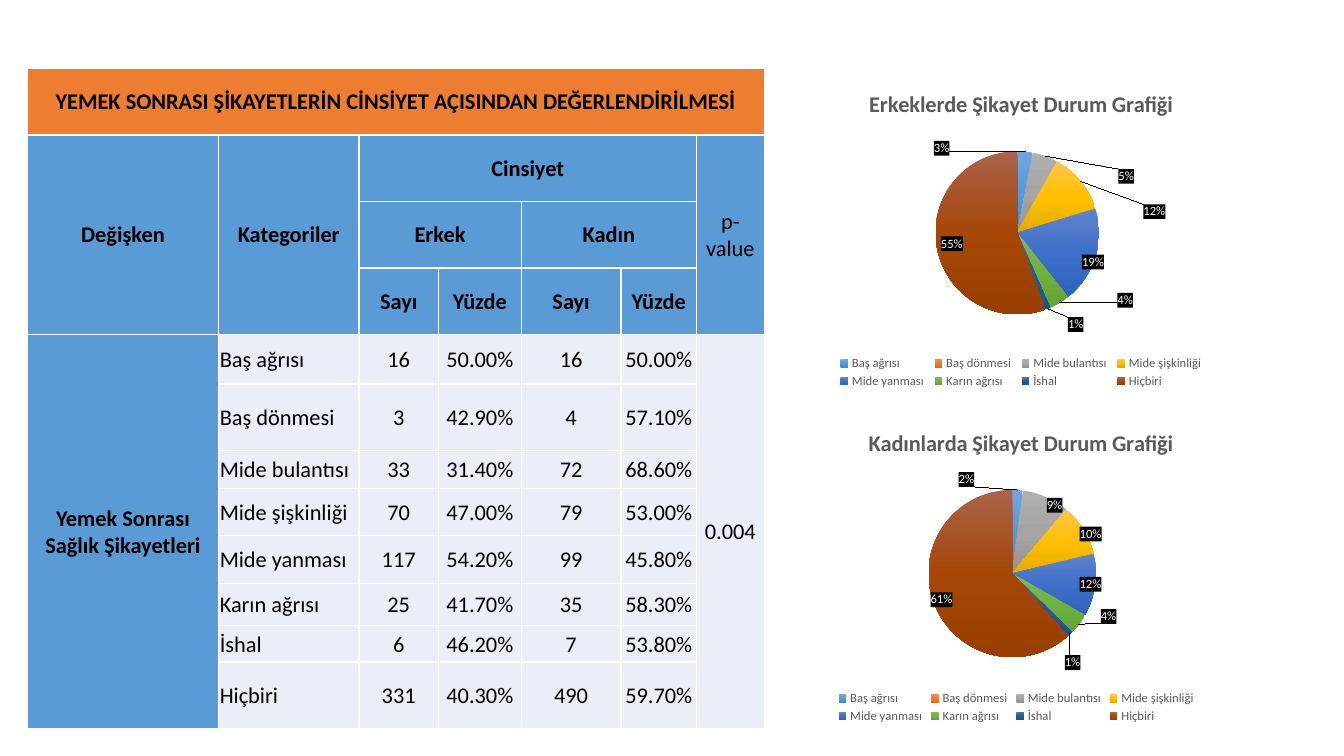
"""Build a slide with a table of complaints by gender and two pie charts."""
from copy import deepcopy
from math import cos, pi, sin

from pptx import Presentation, util as u
from pptx.chart.data import CategoryChartData
from pptx.dml.color import RGBColor
from pptx.enum import chart as ch, text
from pptx.oxml import parse_xml
from pptx.oxml.ns import nsdecls, qn

NAMES = ["Baş ağrısı", "Baş dönmesi", "Mide bulantısı", "Mide şişkinliği",
         "Mide yanması", "Karın ağrısı", "İshal", "Hiçbiri"]
COUNTS = [("16", "50.00%", "16", "50.00%"), ("3", "42.90%", "4", "57.10%"),
          ("33", "31.40%", "72", "68.60%"), ("70", "47.00%", "79", "53.00%"),
          ("117", "54.20%", "99", "45.80%"), ("25", "41.70%", "35", "58.30%"),
          ("6", "46.20%", "7", "53.80%"), ("331", "40.30%", "490", "59.70%")]
COLS = [1.9, 1.39, 0.79, 0.82, 0.99, 0.75, 0.67]
ROWS = [0.66] * 4 + [0.49, 0.66, 0.38, 0.46, 0.48, 0.42, 0.36, 0.66]
BLUE, PALE, ORANGE = "5B9BD5", "EAEFF7", "ED7D31"
HEADS = [(0, 0, 1, 7, "YEMEK SONRASI ŞİKAYETLERİN CİNSİYET AÇISINDAN DEĞERLENDİRİLMESİ"),
         (1, 0, 3, 1, "Değişken"), (1, 1, 3, 1, "Kategoriler"),
         (1, 2, 1, 4, "Cinsiyet"), (1, 6, 3, 1, "p-value"),
         (2, 2, 1, 2, "Erkek"), (2, 4, 1, 2, "Kadın"),
         (3, 2, 1, 1, "Sayı"), (3, 3, 1, 1, "Yüzde"),
         (3, 4, 1, 1, "Sayı"), (3, 5, 1, 1, "Yüzde"),
         (4, 0, 8, 1, "Yemek Sonrası Sağlık Şikayetleri"), (4, 6, 8, 1, "0.004")]
SHADES = [("71A6DB", "559BDB", "448ACA"), ("F18C57", "F67B28", "E56C19"),
          ("AFAFAF", "A5A5A5", "939393"), ("FFC64B", "FFC000", "E3AB00"),
          ("6183CB", "3E70CA", "3062BB"), ("81B861", "6FB242", "62A336"),
          ("51739F", "205E97", "17548B"), ("AB634B", "A54707", "983E00")]
MEN = [(3, 9.34, 1.47), (0, 11.18, 1.46), (5, 11.17, 1.75), (12, 11.45, 2.1),
       (19, 10.84, 2.6), (4, 11.16, 2.98), (1, 10.67, 3.22), (55, 9.44, 2.42)]
WOMEN = [(2, 9.58, 4.75), (0, 10.63, 4.75), (9, 10.51, 5), (10, 10.87, 5.26),
         (12, 10.86, 5.86), (4, 11.02, 6.15), (1, 10.67, 6.6), (61, 9.29, 6)]


def paint(code):
    """Turn a hex string into a colour."""
    return RGBColor.from_string(code)


def place(parent, index, inner=False, **parts):
    """Give a chart part a manual layout, in fractions of the chart."""
    for old in parent.findall(qn("c:layout")):
        parent.remove(old)
    body = '<c:layoutTarget val="inner"/>' if inner else ""
    if "w" in parts or "edge" in parts:
        parts.pop("edge", None)
        body += '<c:xMode val="edge"/><c:yMode val="edge"/>'
    body += "".join(f'<c:{key} val="{val:.4f}"/>' for key, val in parts.items())
    parent.insert(index, parse_xml(
        f'<c:layout {nsdecls("c")}><c:manualLayout>{body}</c:manualLayout></c:layout>'))


class Deck:
    """Hold the style and the current slide."""

    def __init__(self, face="Calibri"):
        """Open a blank wide slide."""
        self.face = face
        self.file = Presentation()
        self.file.slide_width, self.file.slide_height = u.Inches(13.33), u.Inches(7.5)
        self.slide = self.file.slides.add_slide(self.file.slide_layouts[6])

    def style(self, font, size, code, bold=False):
        """Set a font."""
        font.name, font.size, font.bold = self.face, u.Pt(size), bold
        font.color.rgb = paint(code)

    def cell(self, cell, words, fill, bold=False, left=False):
        """Fill and border one cell and write its text."""
        cell.margin_left = cell.margin_right = cell.margin_top = u.Inches(0.01)
        cell.margin_bottom = 0
        cell.vertical_anchor = text.MSO_ANCHOR.MIDDLE
        for side in "LRTB":
            cell._tc.get_or_add_tcPr().append(parse_xml(
                f'<a:ln{side} {nsdecls("a")} w="12700"><a:solidFill>'
                f'<a:srgbClr val="FFFFFF"/></a:solidFill></a:ln{side}>'))
        cell.fill.solid()
        cell.fill.fore_color.rgb = paint(fill)
        para = cell.text_frame.paragraphs[0]
        para.alignment = text.PP_ALIGN.LEFT if left else text.PP_ALIGN.CENTER
        if words:
            run = para.add_run()
            run.text = words
            self.style(run.font, 16, "000000", bold)

    def table(self, x, y):
        """Draw the table of complaints."""
        grid = self.slide.shapes.add_table(
            len(ROWS), len(COLS), u.Inches(x), u.Inches(y),
            u.Inches(sum(COLS)), u.Inches(sum(ROWS))).table
        for col, wide in zip(grid.columns, COLS):
            col.width = u.Inches(wide)
        for row, high in zip(grid.rows, ROWS):
            row.height = u.Inches(high)
        words = {(r, c): label for r, c, _, _, label in HEADS}
        for r, (name, counts) in enumerate(zip(NAMES, COUNTS), 4):
            words.update({(r, c): word for c, word in enumerate((name, *counts), 1)})
        for r in range(len(ROWS)):
            for c in range(len(COLS)):
                head = r < 4 or c == 0
                fill = ORANGE if r == 0 else BLUE if head else PALE
                self.cell(grid.cell(r, c), words.get((r, c)), fill,
                          bold=head and (r, c) != (1, 6), left=r > 3 and c == 1)
        for r, c, down, across, _ in HEADS:
            if down * across > 1:
                grid.cell(r, c).merge(grid.cell(r + down - 1, c + across - 1))

    def pie(self, title, box, disc, slices, spot, reach):
        """Draw a pie whose labels sit at given points of the slide."""
        x, y, wide, high = box
        midx, midy, rad = disc
        data = CategoryChartData()
        data.categories = NAMES
        data.add_series("Series 1", [part[0] for part in slices])
        chart = self.slide.shapes.add_chart(
            ch.XL_CHART_TYPE.PIE, *map(u.Inches, box), data).chart
        self.style(chart.font, 10, "000000")
        root = chart._chartSpace
        root.find(qn("c:chart")).addnext(parse_xml(
            f'<c:spPr {nsdecls("c", "a")}><a:noFill/><a:ln><a:noFill/></a:ln></c:spPr>'))
        chart.has_title = True
        run = chart.chart_title.text_frame.paragraphs[0].add_run()
        run.text = title
        self.style(run.font, 16, "595959", True)
        place(chart.chart_title._element, 1, edge=True, x=0.243, y=0.05)
        chart.has_legend = True
        chart.legend.position = ch.XL_LEGEND_POSITION.BOTTOM
        chart.legend.include_in_layout = False
        self.style(chart.legend.font, 9, "595959")
        place(chart.legend._element, 1, x=0.19, y=0.87, w=0.63, h=0.12)
        place(root.find(".//" + qn("c:plotArea")), 0, inner=True,
              x=(midx - rad - x) / wide, y=(midy - rad - y) / high,
              w=2 * rad / wide, h=2 * rad / high)
        plot = chart.plots[0]
        plot.vary_by_categories = True
        series = plot.series[0]
        marks = series.data_labels
        marks.number_format, marks.number_format_is_linked = '0"%"', False
        marks.show_value, marks.position = True, spot
        self.style(marks.font, 9, "FFFFFF")
        total, done = sum(part[0] for part in slices), 0
        for i, (value, tox, toy) in enumerate(slices):
            turn = 2 * pi * (done + value / 2) / total
            done += value
            point = series.points[i]
            self.shade(series, point.format.fill, SHADES[i])
            mark = point.data_label
            self.style(mark.font, 9, "FFFFFF")
            mark.position = spot
            node = mark._dLbl
            place(node, 1, x=(tox - midx - reach * rad * sin(turn)) / wide,
                  y=(toy - midy + reach * rad * cos(turn)) / high)
            for old in node.findall(qn("c:spPr")):
                node.remove(old)
            node.insert(2, parse_xml(
                f'<c:numFmt {nsdecls("c")} formatCode="0&quot;%&quot;" sourceLinked="0"/>'))
            node.insert(3, parse_xml(
                f'<c:spPr {nsdecls("c", "a")}><a:solidFill>'
                '<a:srgbClr val="000000"/></a:solidFill></c:spPr>'))

    def shade(self, series, fill, codes):
        """Give a slice three shades from top to bottom."""
        fill.gradient()
        fill.gradient_angle = 270
        stops = series._element.findall(".//" + qn("a:gsLst"))[-1]
        stops.append(deepcopy(stops[0]))
        for i, (stop, code) in enumerate(zip(fill.gradient_stops, codes)):
            stop.color.rgb = paint(code)
            stop.position = i / 2


def main():
    """Build and save the slide."""
    deck = Deck()
    deck.table(0.27, 0.68)
    deck.pie("Erkeklerde Şikayet Durum Grafiği", (7.15, 0.68, 5.89, 3.24),
             (10.09, 2.31, 0.81), MEN, ch.XL_LABEL_POSITION.CENTER, 0.5)
    deck.pie("Kadınlarda Şikayet Durum Grafiği", (7.18, 4.04, 5.74, 3.2),
             (10.04, 5.69, 0.83), WOMEN, ch.XL_LABEL_POSITION.INSIDE_END, 0.85)
    deck.file.save("out.pptx")


if __name__ == "__main__":
    main()
